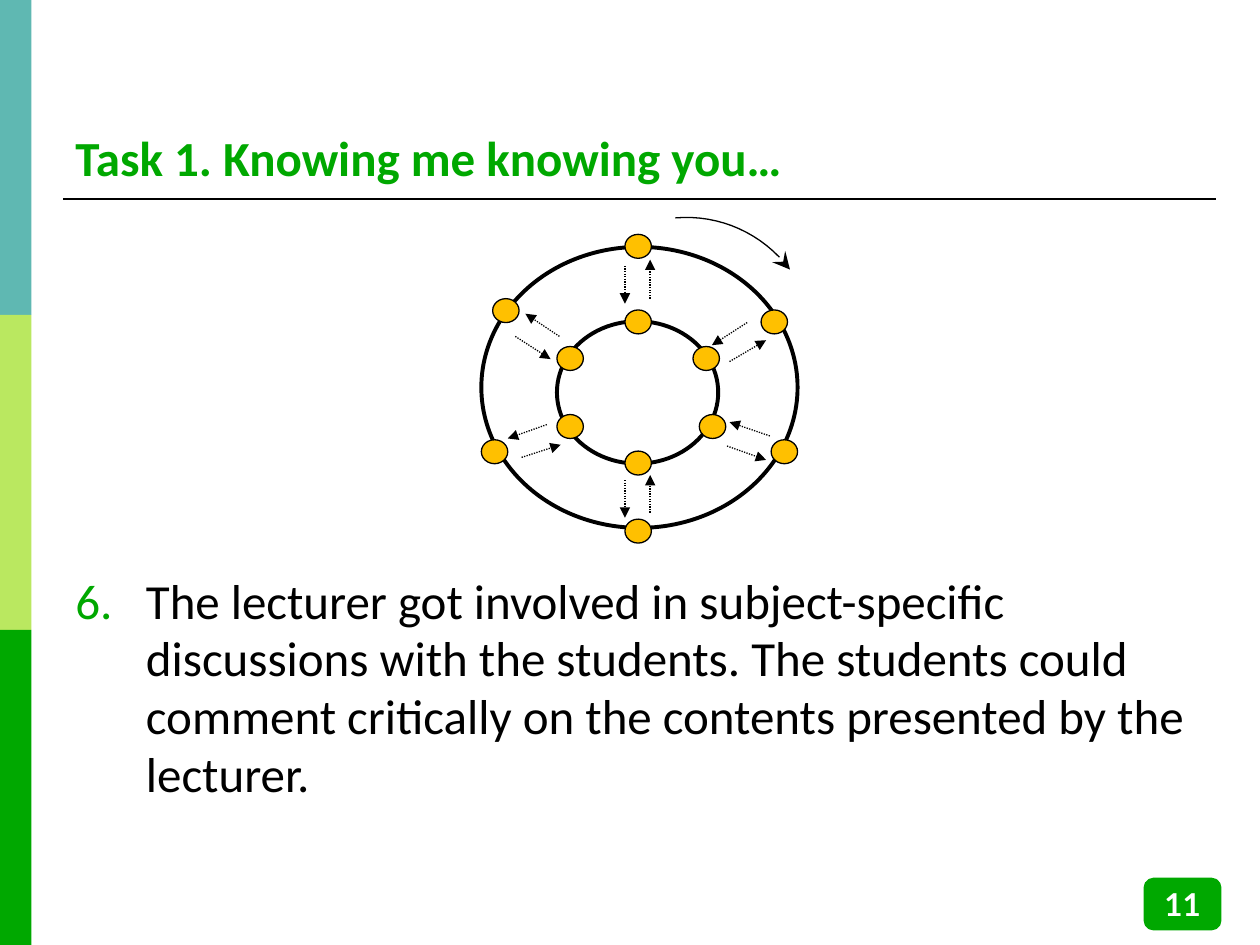
from dataclasses import dataclass

from lxml.etree import SubElement
from pptx import Presentation
from pptx.dml.color import RGBColor
from pptx.enum.dml import MSO_LINE
from pptx.enum.shapes import MSO_CONNECTOR, MSO_SHAPE
from pptx.enum.text import MSO_ANCHOR, PP_ALIGN
from pptx.oxml.ns import qn
from pptx.util import Emu, Inches, Pt

COLS, ROWS = 10, 7.5
CELL = Inches(1)


@dataclass(frozen=True)
class Theme:
    teal: str = "5FB8B2"
    lime: str = "BAE860"
    green: str = "00A800"
    amber: str = "FFC000"
    black: str = "000000"
    white: str = "FFFFFF"
    font: str = "Calibri"
    number_font: str = "Lato"
    text_size: float = 28
    number_size: float = 18
    thin: float = 0.75
    rule: float = 1.5
    ring: float = 2.25


T = Theme()

BANDS = (T.teal, T.lime, T.green)
RINGS = ((3.82, 1.96, 2.51, 2.23), (4.42, 2.55, 1.28, 1.13))
DOT_W, DOT_H = 0.21, 0.19
# Top-left corners, one outer and one inner person per pair
PAIRS = (
    ((4.96, 1.86), (4.96, 2.46)),
    ((3.91, 2.37), (4.42, 2.75)),
    ((3.82, 3.49), (4.42, 3.29)),
    ((4.96, 4.12), (4.96, 3.58)),
    ((6.04, 2.46), (5.5, 2.75)),
    ((6.12, 3.49), (5.55, 3.29)),
)
# Start and end of the two arrows between each pair
TALKS = (
    ((4.96, 2.11), (4.96, 2.41)), ((5.16, 2.37), (5.16, 2.06)),
    ((4.44, 2.67), (4.17, 2.49)), ((4.09, 2.67), (4.37, 2.85)),
    ((4.34, 3.37), (4.03, 3.48)), ((4.14, 3.63), (4.45, 3.53)),
    ((4.96, 3.81), (4.96, 4.11)), ((5.16, 4.07), (5.16, 3.77)),
    ((5.93, 2.56), (5.65, 2.74)), ((5.79, 2.87), (6.08, 2.7)),
    ((6.11, 3.46), (5.79, 3.35)), ((5.77, 3.54), (6.08, 3.65)),
)
TURN = ((5.36, 1.73), (5.71, 1.7), (6.05, 1.85), (6.27, 2.14))


def grid(*cells):
    return [Emu(round(n * CELL)) for n in cells]


def rgb(code):
    return RGBColor.from_string(code)


def set_line(sp, color, width):
    sp.line.color.rgb = rgb(color)
    sp.line.width = Pt(width)


def add_box(shapes, kind, at, fill, line=None, width=T.thin):
    sp = shapes.add_shape(kind, *grid(*at))
    sp.shadow.inherit = False
    sp.fill.solid()
    sp.fill.fore_color.rgb = rgb(fill)
    if line:
        set_line(sp, line, width)
    else:
        sp.line.fill.background()
    return sp


def add_line(shapes, start, end, width):
    sp = shapes.add_connector(MSO_CONNECTOR.STRAIGHT, *grid(*start, *end))
    set_line(sp, T.black, width)
    SubElement(sp._element.spPr, qn("a:effectLst"))
    return sp


def add_arrowhead(sp, kind, size="med"):
    ln = sp.line._get_or_add_ln()
    SubElement(ln, qn("a:tailEnd"), type=kind, w=size, len=size)


def add_curve(shapes, points, steps=16):
    """Draw a cubic curve through its end points as an open outline."""
    def at(t):
        weights = ((1 - t) ** 3, 3 * t * (1 - t) ** 2,
                   3 * t ** 2 * (1 - t), t ** 3)
        return grid(*(sum(w * p[axis] for w, p in zip(weights, points))
                      for axis in (0, 1)))

    fb = shapes.build_freeform(*at(0))
    fb.add_line_segments([at(i / steps) for i in range(1, steps + 1)],
                         close=False)
    sp = fb.convert_to_shape()
    sp.shadow.inherit = False
    sp.fill.background()
    set_line(sp, T.black, T.thin)
    return sp


def write(sp, text, color, anchor, **font):
    tf = sp.text_frame
    tf.word_wrap = True
    tf.vertical_anchor = anchor
    p = tf.paragraphs[0]
    r = p.add_run()
    r.text = text
    values = {"name": T.font, "size": Pt(T.text_size), "bold": False, **font}
    for name, value in values.items():
        setattr(r.font, name, value)
    r.font.color.rgb = rgb(color)
    return p


def number_item(p, start, indent):
    """Give a paragraph a coloured automatic number and a hanging indent."""
    pPr = p._p.get_or_add_pPr()
    pPr.set("marL", str(Inches(indent)))
    pPr.set("indent", str(-Inches(indent)))
    color = SubElement(pPr, qn("a:buClr"))
    SubElement(color, qn("a:srgbClr"), val=T.green)
    SubElement(pPr, qn("a:buFont"), typeface=T.font)
    SubElement(pPr, qn("a:buAutoNum"), type="arabicPeriod", startAt=str(start))


def add_frame(s):
    height = ROWS / len(BANDS)
    for i, color in enumerate(BANDS):
        add_box(s.shapes, MSO_SHAPE.RECTANGLE, (0, i * height, 0.25, height),
                color)
    add_line(s.shapes, (0.5, 1.58), (9.65, 1.58), T.rule)


def add_texts(s):
    title = s.shapes.add_textbox(*grid(0.5, 0.28, 9.15, 1.25))
    write(title, "Task 1. Knowing me knowing you…", T.green,
          MSO_ANCHOR.BOTTOM, bold=True)
    body = s.shapes.add_textbox(*grid(0.5, 4.5, 9.15, 2.21))
    p = write(body, "The lecturer got involved in subject-specific discussions "
              "with the students. The students could comment critically on "
              "the contents presented by the lecturer.",
              T.black, MSO_ANCHOR.TOP)
    p.line_spacing = 0.98
    number_item(p, 6, 0.56)


def add_circles(s):
    shapes = s.shapes.add_group_shape().shapes
    for at in RINGS:
        add_box(shapes, MSO_SHAPE.OVAL, at, T.white, T.black, T.ring)
    for pair in PAIRS:
        for corner in pair:
            add_box(shapes, MSO_SHAPE.FLOWCHART_CONNECTOR,
                    (*corner, DOT_W, DOT_H), T.amber, T.black)
    for start, end in TALKS:
        sp = add_line(shapes, start, end, T.thin)
        sp.line.dash_style = MSO_LINE.ROUND_DOT
        add_arrowhead(sp, "triangle")
    add_arrowhead(add_curve(shapes, TURN), "stealth", "lg")


def add_page_number(s):
    sp = add_box(s.shapes, MSO_SHAPE.ROUNDED_RECTANGLE,
                 (9.09, 6.98, 0.59, 0.39), T.green, T.green, 2)
    p = write(sp, "11", T.white, MSO_ANCHOR.MIDDLE, name=T.number_font,
              size=Pt(T.number_size), bold=True)
    p.alignment = PP_ALIGN.CENTER


def main():
    prs = Presentation()
    prs.slide_width, prs.slide_height = grid(COLS, ROWS)
    s = prs.slides.add_slide(prs.slide_layouts[6])
    add_frame(s)
    add_texts(s)
    add_circles(s)
    add_page_number(s)
    prs.save("out.pptx")


if __name__ == "__main__":
    main()
